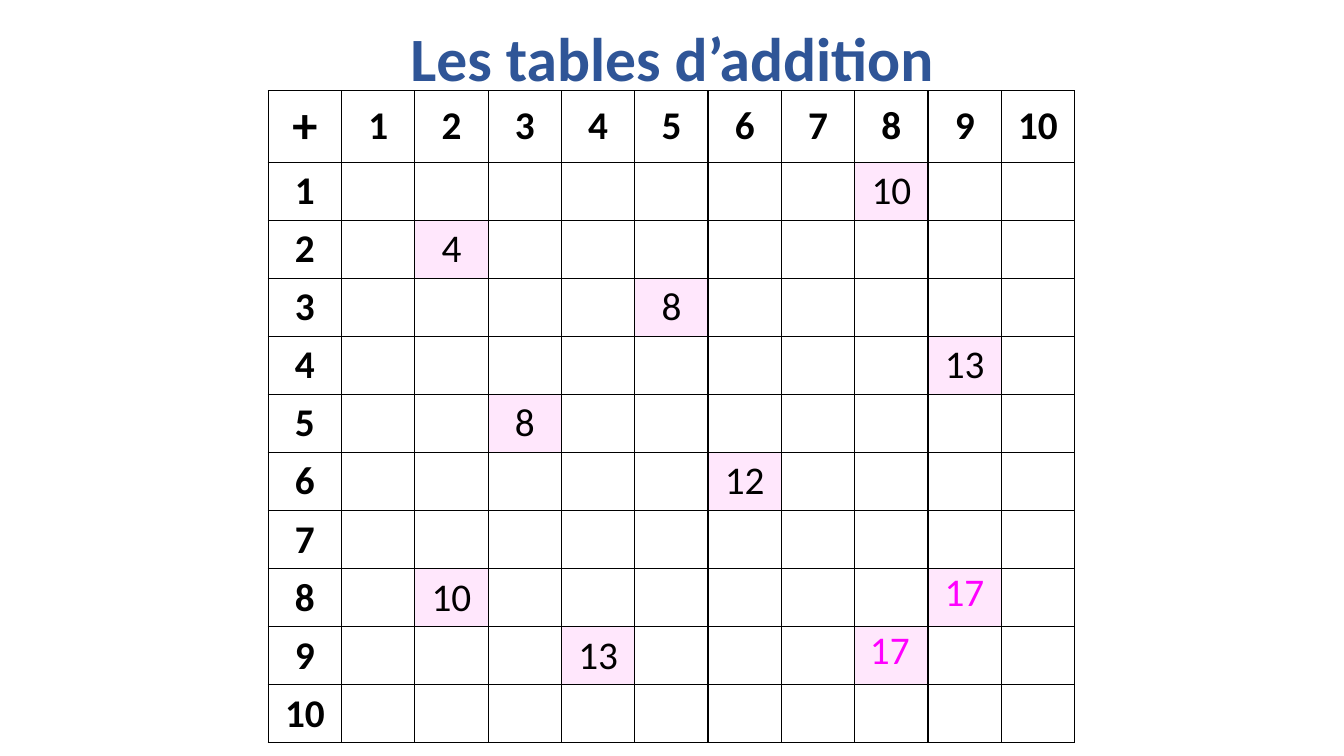
from dataclasses import dataclass

from lxml import etree
from pptx import Presentation
from pptx.dml.color import RGBColor
from pptx.enum import text
from pptx.oxml import ns
from pptx.util import Inches, Pt


@dataclass(frozen=True)
class Theme:
    font: str = "Calibri"
    title: str = "2F5597"
    ink: str = "000000"
    header: str = "FFFFFF"
    highlight: str = "FFE7FC"
    answer: str = "FF00FF"
    title_size: int = 44
    sign_size: int = 36
    number_size: int = 28
    border_width: int = 1


@dataclass(frozen=True)
class Sum:
    row: int
    column: int
    value: str = ""


@dataclass(frozen=True)
class Answer:
    value: str
    left: float
    top: float


THEME = Theme()
LAST = 10
HEADER_HEIGHT, ROW_HEIGHT, TABLE_WIDTH = 0.7, 0.57, 8
SUMS = [
    Sum(1, 8, "10"), Sum(2, 2, "4"), Sum(3, 5, "8"), Sum(4, 9, "13"),
    Sum(5, 3, "8"), Sum(6, 6, "12"), Sum(8, 2, "10"), Sum(8, 9),
    Sum(9, 4, "13"), Sum(9, 8),
]
ANSWERS = [Answer("17", 8.47, 6.15), Answer("17", 9.21, 5.58)]


def write(frame, words: str, size: int, color: str, bold: bool = False) -> None:
    """Set centred text in the theme font."""
    frame.text = words
    para = frame.paragraphs[0]
    para.alignment = text.PP_ALIGN.CENTER
    for span in para.runs:
        span.font.name = THEME.font
        span.font.size = Pt(size)
        span.font.bold = bold
        span.font.color.rgb = RGBColor.from_string(color)


def add_borders(cell) -> None:
    properties = cell._tc.get_or_add_tcPr()
    for side in ("a:lnL", "a:lnR", "a:lnT", "a:lnB"):
        line = etree.SubElement(properties, ns.qn(side), w=str(Pt(THEME.border_width)))
        fill = etree.SubElement(line, ns.qn("a:solidFill"))
        etree.SubElement(fill, ns.qn("a:srgbClr"), val=THEME.ink)


def fill_cell(cell, color: str, words: str, size: int, bold: bool) -> None:
    cell.fill.solid()
    cell.fill.fore_color.rgb = RGBColor.from_string(color)
    if words:
        write(cell.text_frame, words, size, THEME.ink, bold)


def add_title(page) -> None:
    title = page.shapes.title
    title.left, title.top = Inches(0.92), Inches(-0.11)
    title.width, title.height = Inches(11.5), Inches(1.45)
    title.text_frame.vertical_anchor = text.MSO_ANCHOR.MIDDLE
    write(title.text_frame, "Les tables d’addition", THEME.title_size, THEME.title, True)
    title.text_frame.paragraphs[0].line_spacing = 0.9


def add_addition_table(page) -> None:
    count = LAST + 1
    table = page.shapes.add_table(
        count, count, Inches(2.66), Inches(0.9), Inches(TABLE_WIDTH),
        Inches(HEADER_HEIGHT + LAST * ROW_HEIGHT),
    ).table
    table.first_row = table.horz_banding = False
    for column in table.columns:
        column.width = Inches(TABLE_WIDTH / count)
    for number, row in enumerate(table.rows):
        row.height = Inches(ROW_HEIGHT if number else HEADER_HEIGHT)
    for cell in table.iter_cells():
        add_borders(cell)
        cell.fill.background()
        cell.vertical_anchor = text.MSO_ANCHOR.MIDDLE

    fill_cell(table.cell(0, 0), THEME.header, "+", THEME.sign_size, True)
    for number in range(1, count):
        for cell in (table.cell(0, number), table.cell(number, 0)):
            fill_cell(cell, THEME.header, str(number), THEME.number_size, True)
    for item in SUMS:
        cell = table.cell(item.row, item.column)
        fill_cell(cell, THEME.highlight, item.value, THEME.number_size, False)


def add_answers(page) -> None:
    group = page.shapes.add_group_shape()
    for answer in ANSWERS:
        box = group.shapes.add_textbox(
            Inches(answer.left), Inches(answer.top), Inches(0.71), Inches(0.57)
        )
        box.text_frame.word_wrap = True
        box.text_frame.auto_size = text.MSO_AUTO_SIZE.SHAPE_TO_FIT_TEXT
        write(box.text_frame, answer.value, THEME.number_size, THEME.answer)


def main() -> None:
    deck = Presentation()
    deck.slide_width, deck.slide_height = Inches(13.33), Inches(7.5)
    page = deck.slides.add_slide(deck.slide_layouts.get_by_name("Title Only"))
    add_title(page)
    add_addition_table(page)
    add_answers(page)
    deck.save("out.pptx")


if __name__ == "__main__":
    main()
